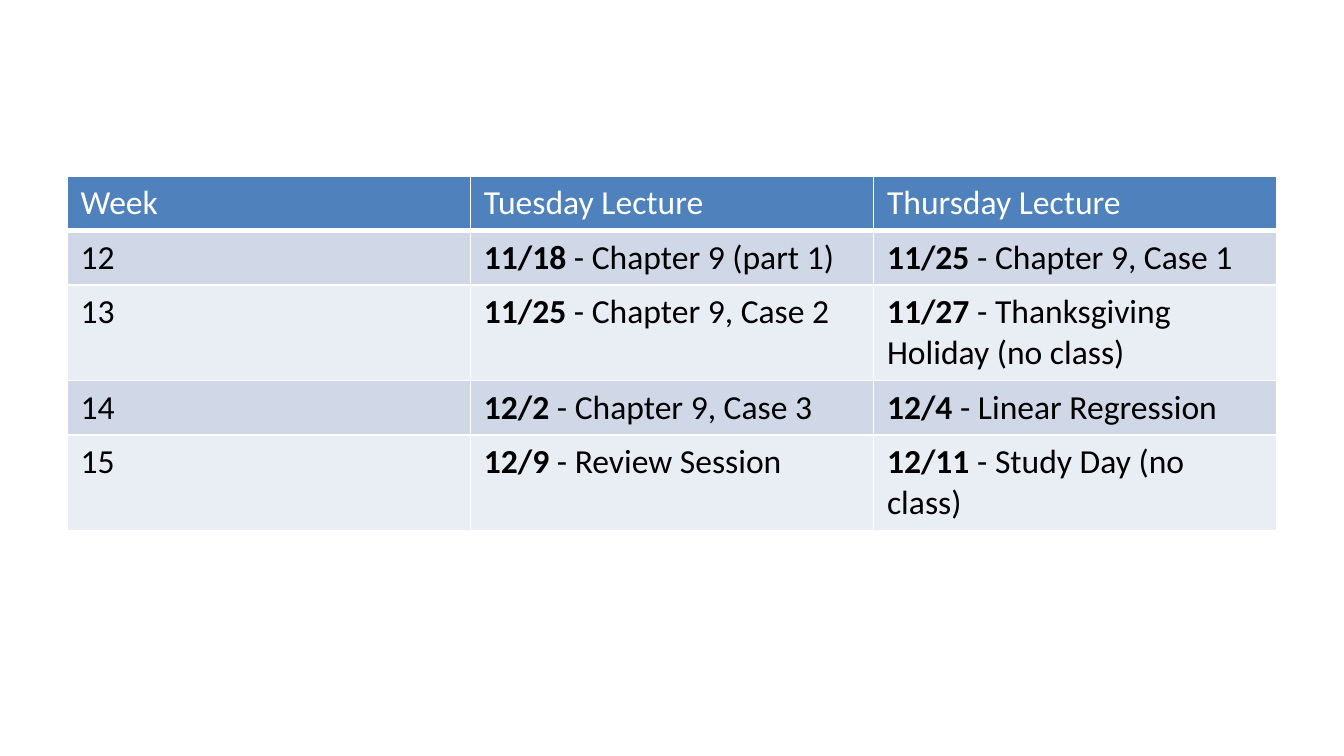
import pptx
import pptx.dml.color
import pptx.oxml
import pptx.oxml.ns
import pptx.util
from dataclasses import dataclass

Pt = pptx.util.Pt
RGB = pptx.dml.color.RGBColor.from_string


@dataclass(frozen=True)
class Theme:
    font: str = "Calibri"
    size: float = 18
    head: str = "4F81BD"
    bands: tuple[str, str] = ("D0D8E8", "E9EDF4")
    light: str = "FFFFFF"
    dark: str = "000000"
    thin: float = 1
    thick: float = 3


@dataclass(frozen=True)
class Entry:
    date: str
    topic: str


@dataclass(frozen=True)
class Week:
    label: str
    tuesday: Entry
    thursday: Entry
    lines: int = 1


THEME = Theme()
HEADS = ("Week", "Tuesday Lecture", "Thursday Lecture")
WEEKS = (
    Week("12", Entry("11/18", "Chapter 9 (part 1)"), Entry("11/25", "Chapter 9, Case 1")),
    Week("13", Entry("11/25", "Chapter 9, Case 2"),
         Entry("11/27", "Thanksgiving Holiday (no class)"), 2),
    Week("14", Entry("12/2", "Chapter 9, Case 3"), Entry("12/4", "Linear Regression")),
    Week("15", Entry("12/9", "Review Session"), Entry("12/11", "Study Day (no class)"), 2),
)
LEFT, TOP, COL = 36, 94.4, 216
PAD, LINE = 7.2, 21.96


def add_run(para, text: str, color: str, bold: bool = False) -> None:
    run = para.add_run()
    run.text = text
    form = {"name": THEME.font, "size": Pt(THEME.size), "bold": bold}
    for key, value in form.items():
        setattr(run.font, key, value)
    run.font.color.rgb = RGB(color)


def set_edges(cell, base: float) -> None:
    """Draw the white cell borders; they must come before the fill."""
    props = cell._tc.get_or_add_tcPr()
    widths = {"lnL": THEME.thin, "lnR": THEME.thin, "lnT": THEME.thin, "lnB": base}
    for spot, (tag, width) in enumerate(widths.items()):
        edge = pptx.oxml.parse_xml(
            f'<a:{tag} {pptx.oxml.ns.nsdecls("a")} w="{Pt(width)}">'
            f'<a:solidFill><a:srgbClr val="{THEME.light}"/></a:solidFill></a:{tag}>')
        props.insert(spot, edge)


def fill_cell(cell, item: str | Entry, fill: str, color: str, base: float) -> None:
    cell.fill.solid()
    cell.fill.fore_color.rgb = RGB(fill)
    set_edges(cell, base)
    para = cell.text_frame.paragraphs[0]
    if isinstance(item, Entry):
        add_run(para, item.date, color, True)
        add_run(para, f" - {item.topic}", color)
    else:
        add_run(para, item, color)


def draw_table(slide) -> None:
    lines = [1] + [week.lines for week in WEEKS]
    highs = [PAD + LINE * count for count in lines]
    grid = slide.shapes.add_table(len(lines), len(HEADS), Pt(LEFT), Pt(TOP),
                                  Pt(COL * len(HEADS)), Pt(sum(highs))).table
    for col in grid.columns:
        col.width = Pt(COL)
    for row, high in zip(grid.rows, highs):
        row.height = Pt(high)

    # Header row
    for col, head in enumerate(HEADS):
        fill_cell(grid.cell(0, col), head, THEME.head, THEME.light, THEME.thick)

    # Week rows in alternating bands
    for row, week in enumerate(WEEKS, 1):
        band = THEME.bands[(row - 1) % 2]
        for col, item in enumerate((week.label, week.tuesday, week.thursday)):
            fill_cell(grid.cell(row, col), item, band, THEME.dark, THEME.thin)


def main() -> None:
    deck = pptx.Presentation()
    deck.slide_width, deck.slide_height = Pt(720), Pt(405)
    draw_table(deck.slides.add_slide(deck.slide_layouts[6]))
    deck.save("out.pptx")


if __name__ == "__main__":
    main()
